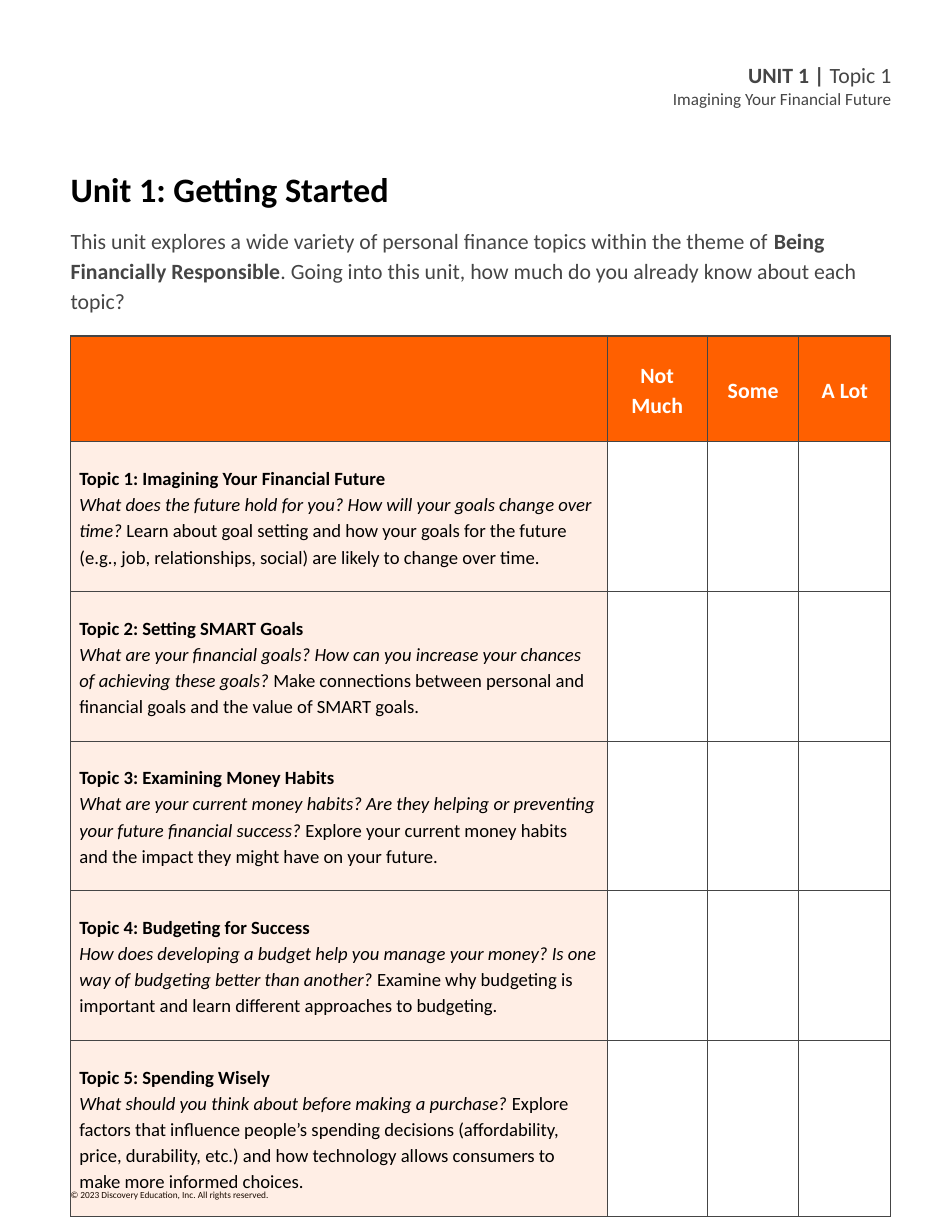
from lxml import etree
from pptx import Presentation
from pptx.dml.color import RGBColor
from pptx.enum import text
from pptx.oxml import ns
from pptx.util import Cm, Pt

# Content: a paragraph is a list of (words, style) spans
HEADER = [
    ([("UNIT 1 | ", "b"), ("Topic 1", "")], 14),
    ([("Imagining Your Financial Future", "")], 11),
]
TITLE = "Unit 1: Getting Started"
INTRO = [
    ("This unit explores a wide variety of personal finance topics within the theme of ", ""),
    ("Being Financially Responsible", "b"),
    (". Going into this unit, how much do you already know about each topic?", ""),
]
RATINGS = ["Not Much", "Some", "A Lot"]
TOPICS = [
    ("Topic 1: Imagining Your Financial Future",
     "What does the future hold for you? How will your goals change over time?",
     " Learn about goal setting and how your goals for the future (e.g., job, "
     "relationships, social) are likely to change over time."),
    ("Topic 2: Setting SMART Goals",
     "What are your financial goals? How can you increase your chances of achieving these goals? ",
     "Make connections between personal and financial goals and the value of SMART goals."),
    ("Topic 3: Examining Money Habits",
     "What are your current money habits? Are they helping or preventing your future "
     "financial success? ",
     "Explore your current money habits and the impact they might have on your future."),
    ("Topic 4: Budgeting for Success",
     "How does developing a budget help you manage your money? Is one way of budgeting "
     "better than another? ",
     "Examine why budgeting is important and learn different approaches to budgeting."),
    ("Topic 5: Spending Wisely",
     "What should you think about before making a purchase? ",
     "Explore factors that influence people’s spending decisions (affordability, price, "
     "durability, etc.) and how technology allows consumers to make more informed choices."),
]
COPYRIGHT = "© 2023 Discovery Education, Inc. All rights reserved."

THEME = {
    "font": "Calibri", "ink": "000000", "grey": "454545", "white": "FFFFFF",
    "accent": "FF6000", "tint": 10, "border": 0.75,
    "title": 22, "lead": 14, "cell": 12, "small": 6, "leading": 1.15,
}
LEFT, WIDTH = 1.6, 18.42
COLUMNS = [12.17, 2.27, 2.08, 2.08]
ROWS = [1.14, 3.25, 3.15, 3.15, 3.28, 3.84]
ALIGN = text.PP_ALIGN


def write(para, spans, size, color="ink", align=ALIGN.LEFT, leading=1.0):
    para.alignment, para.line_spacing, para.space_before = align, leading, Pt(0)
    for words, style in spans:
        span = para.add_run()
        span.text = words
        font = span.font
        font.name, font.size = THEME["font"], Pt(size)
        font.bold, font.italic = "b" in style, "i" in style
        font.color.rgb = RGBColor.from_string(THEME[color])


def place(box, left, top, width, height, inset=0, anchor=text.MSO_ANCHOR.TOP):
    box.left, box.top, box.width, box.height = Cm(left), Cm(top), Cm(width), Cm(height)
    frame = box.text_frame
    frame.word_wrap, frame.auto_size = True, text.MSO_AUTO_SIZE.NONE
    frame.vertical_anchor = anchor
    frame.margin_left = frame.margin_top = 0
    frame.margin_right = frame.margin_bottom = Cm(inset)
    return frame


def add_box(page, *bounds, **options):
    return place(page.shapes.add_textbox(0, 0, 0, 0), *bounds, **options)


def add_borders(cell):
    properties = cell._tc.get_or_add_tcPr()
    for index, side in enumerate(("lnL", "lnR", "lnT", "lnB")):
        line = etree.Element(ns.qn("a:" + side), w=str(Pt(THEME["border"])))
        fill = etree.SubElement(line, ns.qn("a:solidFill"))
        etree.SubElement(fill, ns.qn("a:srgbClr"), val=THEME["grey"])
        properties.insert(index, line)


def format_cell(cell, row, column):
    cell.margin_left = cell.margin_right = Cm(0.2)
    cell.margin_top = cell.margin_bottom = Cm(0.51)
    if row and column:
        cell.fill.background()
    else:
        cell.fill.solid()
        cell.fill.fore_color.rgb = RGBColor.from_string(THEME["accent"])
    if row and not column:
        color = cell._tc.tcPr.find(".//" + ns.qn("a:srgbClr"))
        etree.SubElement(color, ns.qn("a:alpha"), val=str(THEME["tint"] * 1000))
    add_borders(cell)


def add_topics(page):
    shape = page.shapes.add_table(len(ROWS), len(COLUMNS), Cm(LEFT), Cm(7.62),
                                  Cm(sum(COLUMNS)), Cm(sum(ROWS)))
    table = shape.table
    table.horz_banding = table.first_row = False
    for column, width in zip(table.columns, COLUMNS):
        column.width = Cm(width)
    for row, height in zip(table.rows, ROWS):
        row.height = Cm(height)
    for row in range(len(ROWS)):
        for column in range(len(COLUMNS)):
            format_cell(table.cell(row, column), row, column)

    for column, rating in enumerate(RATINGS, 1):
        cell = table.cell(0, column)
        cell.vertical_anchor = text.MSO_ANCHOR.MIDDLE
        write(cell.text_frame.paragraphs[0], [(rating, "b")], THEME["lead"], "white",
              ALIGN.CENTER, THEME["leading"])
    for row, (name, question, summary) in enumerate(TOPICS, 1):
        frame = table.cell(row, 0).text_frame
        write(frame.paragraphs[0], [(name, "b")], THEME["cell"], leading=THEME["leading"])
        write(frame.add_paragraph(), [(question, "i"), (summary, "")], THEME["cell"],
              leading=THEME["leading"])


def main():
    deck = Presentation()
    deck.slide_width, deck.slide_height = Cm(21.59), Cm(27.94)
    page = deck.slides.add_slide(deck.slide_layouts[1])

    # Running header and copyright line
    frame = add_box(page, 9.98, 1.4, 10.24, 1.07, anchor=text.MSO_ANCHOR.MIDDLE)
    for index, (spans, size) in enumerate(HEADER):
        para = frame.add_paragraph() if index else frame.paragraphs[0]
        write(para, spans, size, "grey", ALIGN.RIGHT)
    frame = add_box(page, LEFT, 26.92, 8.64, 0.25)
    write(frame.paragraphs[0], [(COPYRIGHT, "")], THEME["small"],
          align=ALIGN.JUSTIFY, leading=THEME["leading"])

    # Title and introduction
    frame = place(page.shapes.title, LEFT, 3.81, WIDTH, 0.91, inset=0.25)
    write(frame.paragraphs[0], [(TITLE, "b")], THEME["title"])
    frame = place(page.placeholders[1], LEFT, 5.08, WIDTH, 21.59)
    para = frame.paragraphs[0]
    properties = para._p.get_or_add_pPr()
    properties.set("marL", "0")
    properties.set("indent", "0")
    etree.SubElement(properties, ns.qn("a:buNone"))
    write(para, INTRO, THEME["lead"], "grey", leading=THEME["leading"])

    # Self-rating table
    add_topics(page)
    deck.save("out.pptx")


if __name__ == "__main__":
    main()
